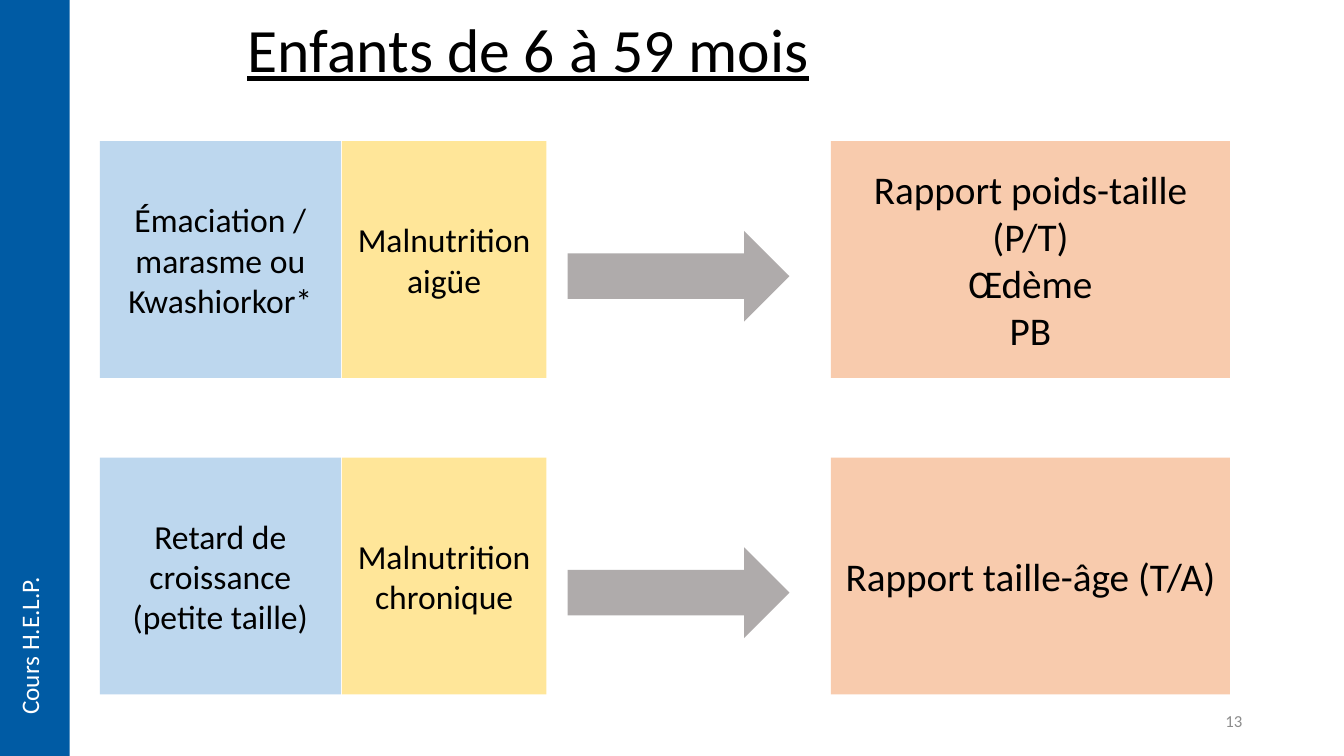
from dataclasses import dataclass

from pptx import Presentation
from pptx.dml.color import RGBColor
from pptx.enum.shapes import MSO_SHAPE
from pptx.enum.text import MSO_ANCHOR, MSO_AUTO_SIZE, PP_ALIGN
from pptx.shapes.autoshape import Shape
from pptx.slide import Slide
from pptx.text.text import TextFrame
from pptx.util import Pt

SCALE = 9144  # EMU per px, 100 px to the inch
FONT = "Calibri"
COLORS = {
    "bar": "005BA4",
    "sign": "BDD7EE",
    "type": "FFE699",
    "arrow": "AFABAB",
    "index": "F8CBAD",
    "text": "000000",
    "light": "FFFFFF",
    "number": "8C8C8C",
}


@dataclass(frozen=True)
class Column:
    left: int
    width: int
    color: str
    size: int


@dataclass(frozen=True)
class Row:
    top: int
    cells: tuple[str, ...]


COLUMNS = (
    Column(99, 239, "sign", 24),
    Column(339, 203, "type", 24),
    Column(824, 396, "index", 28),
)
ROWS = (
    Row(140, (
        "Émaciation /\nmarasme ou Kwashiorkor*",
        "Malnutrition\naigüe",
        "Rapport poids-taille (P/T)\nŒdème\nPB",
    )),
    Row(454, (
        "Retard de croissance\n(petite taille)",
        "Malnutrition\nchronique",
        "Rapport taille-âge (T/A)",
    )),
)
ROW_HEIGHT = 235
ARROW_DROP = 89


def px(*values: int) -> list[int]:
    return [value * SCALE for value in values]


def rgb(name: str) -> RGBColor:
    return RGBColor.from_string(COLORS[name])


def write(frame: TextFrame, text: str, size: int, color: str = "text",
          align: PP_ALIGN = PP_ALIGN.CENTER,
          anchor: MSO_ANCHOR = MSO_ANCHOR.MIDDLE) -> None:
    frame.text = text
    frame.word_wrap = True
    frame.vertical_anchor = anchor
    for line in frame.paragraphs:
        line.alignment = align
        for run in line.runs:
            run.font.name = FONT
            run.font.size = Pt(size)
            run.font.color.rgb = rgb(color)


def block(slide: Slide, kind: MSO_SHAPE, color: str, left: int, top: int,
          width: int, height: int) -> Shape:
    shape = slide.shapes.add_shape(kind, *px(left, top, width, height))
    shape.shadow.inherit = False
    shape.fill.solid()
    shape.fill.fore_color.rgb = rgb(color)
    shape.line.fill.background()
    return shape


def add_title(slide: Slide) -> None:
    title = slide.shapes.title
    title.left, title.top, title.width, title.height = px(99, 0, 850, 90)
    frame = title.text_frame
    write(frame, "Enfants de 6 à 59 mois", 44, anchor=MSO_ANCHOR.BOTTOM)
    frame.auto_size = MSO_AUTO_SIZE.NONE
    line = frame.paragraphs[0]
    line.line_spacing = 0.9
    line.runs[0].font.underline = True


def add_side(slide: Slide) -> None:
    block(slide, MSO_SHAPE.RECTANGLE, "bar", 0, 0, 69, 750)
    label = slide.shapes.add_textbox(*px(9, 561, 50, 158))
    write(label.text_frame, "Cours H.E.L.P.", 18, "light",
          PP_ALIGN.LEFT, MSO_ANCHOR.TOP)
    label.text_frame.word_wrap = False
    label.element.txBody.bodyPr.set("vert", "vert270")


def add_row(slide: Slide, row: Row) -> None:
    for column, text in zip(COLUMNS, row.cells):
        cell = block(slide, MSO_SHAPE.RECTANGLE, column.color,
                     column.left, row.top, column.width, ROW_HEIGHT)
        write(cell.text_frame, text, column.size)
    block(slide, MSO_SHAPE.RIGHT_ARROW, "arrow",
          563, row.top + ARROW_DROP, 220, 90)


def main() -> None:
    deck = Presentation()
    deck.slide_width, deck.slide_height = px(1333, 750)
    slide = deck.slides.add_slide(deck.slide_layouts[5])
    add_side(slide)
    add_title(slide)
    for row in ROWS:
        add_row(slide, row)
    number = slide.shapes.add_textbox(*px(942, 695, 300, 40))
    write(number.text_frame, "13", 12, "number", PP_ALIGN.RIGHT)
    deck.save("out.pptx")


if __name__ == "__main__":
    main()
